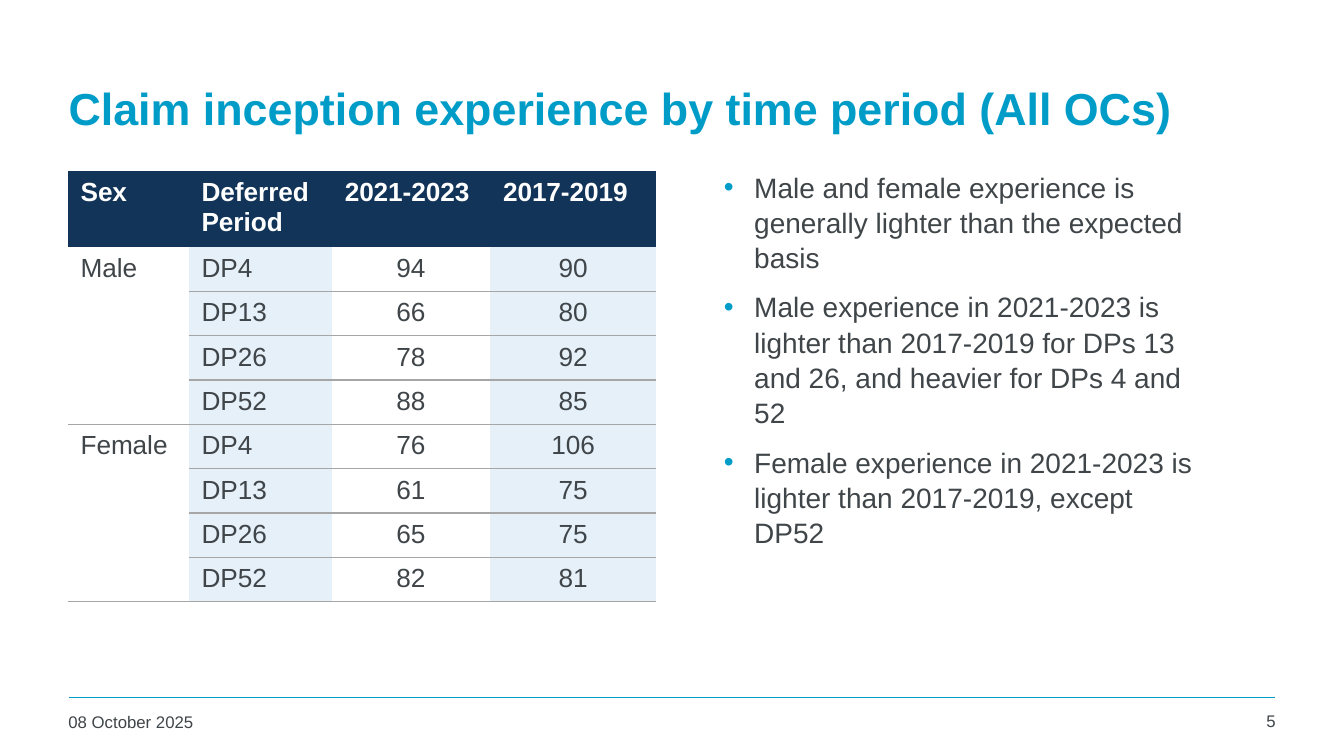
from dataclasses import dataclass

from lxml import etree
from pptx import Presentation
from pptx.dml.color import RGBColor
from pptx.enum import shapes, text
from pptx.oxml import ns
from pptx.util import Inches, Pt


@dataclass(frozen=True)
class Theme:
    font: str = "Arial"
    accent: str = "009CC8"
    navy: str = "113458"
    pale: str = "E5F0F9"
    white: str = "FFFFFF"
    ink: str = "3F4548"
    rule: str = "A6A6A6"
    title_size: float = 32
    body_size: float = 20
    table_size: float = 18.67
    footer_size: float = 12


THEME = Theme()
NO_GRID_STYLE = "{2D5ABB26-0587-4C30-8999-92F81FD0307C}"

TITLE = "Claim inception experience by time period (All OCs)"
HEADINGS = ["Sex", "Deferred Period", "2021-2023", "2017-2019"]
PERIODS = ["DP4", "DP13", "DP26", "DP52"]
EXPERIENCE = {
    "Male": [(94, 90), (66, 80), (78, 92), (88, 85)],
    "Female": [(76, 106), (61, 75), (65, 75), (82, 81)],
}
FINDINGS = [
    "Male and female experience is generally lighter than the expected basis",
    "Male experience in 2021-2023 is lighter than 2017-2019 for DPs 13 and 26, "
    "and heavier for DPs 4 and 52",
    "Female experience in 2021-2023 is lighter than 2017-2019, except DP52",
]


def add_run(paragraph, wording, size, color=THEME.ink, bold=False):
    run = paragraph.add_run()
    run.text = wording
    run.font.name = THEME.font
    run.font.size = Pt(size)
    run.font.bold = bold
    run.font.color.rgb = RGBColor.from_string(color)


def place(shape, box):
    shape.left, shape.top, shape.width, shape.height = (Inches(n) for n in box)


def add_color(parent, tag, color):
    holder = etree.SubElement(parent, ns.qn(tag))
    etree.SubElement(holder, ns.qn("a:srgbClr"), val=color)


def add_bullet(paragraph, indent):
    properties = paragraph._p.get_or_add_pPr()
    properties.set("marL", str(Inches(indent)))
    properties.set("indent", str(-Inches(indent)))
    add_color(properties, "a:buClr", THEME.accent)
    etree.SubElement(properties, ns.qn("a:buChar"), char="•")


def underline_cell(cell):
    properties = cell._tc.get_or_add_tcPr()
    border = etree.Element(ns.qn("a:lnB"), w=str(Pt(1)))
    add_color(border, "a:solidFill", THEME.rule)
    properties.insert(0, border)


def fill_cell(cell, wording, fill, color=THEME.ink, bold=False, centred=False):
    cell.margin_left = cell.margin_right = Inches(0.13)
    cell.margin_top = cell.margin_bottom = Inches(0.07)
    cell.fill.solid()
    cell.fill.fore_color.rgb = RGBColor.from_string(fill)
    paragraph = cell.text_frame.paragraphs[0]
    if centred:
        paragraph.alignment = text.PP_ALIGN.CENTER
    add_run(paragraph, wording, THEME.table_size, color, bold)


# Title
def build_title(slide, box):
    title = slide.shapes.title
    place(title, box)
    frame = title.text_frame
    frame.word_wrap = True
    frame.auto_size = text.MSO_AUTO_SIZE.NONE
    frame.vertical_anchor = text.MSO_ANCHOR.MIDDLE
    paragraph = frame.paragraphs[0]
    paragraph.alignment = text.PP_ALIGN.LEFT
    add_run(paragraph, TITLE, THEME.title_size, THEME.accent, bold=True)


# Experience table: one block of deferred periods for each sex
def build_table(slide, box):
    row_count = 1 + len(EXPERIENCE) * len(PERIODS)
    frame = slide.shapes.add_table(row_count, len(HEADINGS), *(Inches(n) for n in box))
    table = frame.table
    table.first_row = table.horz_banding = False
    table._tbl.tblPr.find(ns.qn("a:tableStyleId")).text = NO_GRID_STYLE
    for column, width in zip(table.columns, [1.2, 1.42, 1.57, 1.65]):
        column.width = Inches(width)
    for index, row in enumerate(table.rows):
        row.height = Inches(0.44 if index else 0.75)

    for column, heading in enumerate(HEADINGS):
        fill_cell(table.cell(0, column), heading, THEME.navy, THEME.white, bold=True)

    for block, (sex, values) in enumerate(EXPERIENCE.items()):
        first = 1 + block * len(PERIODS)
        last = first + len(PERIODS) - 1
        sex_cell = table.cell(first, 0)
        sex_cell.merge(table.cell(last, 0))
        fill_cell(sex_cell, sex, THEME.white)
        underline_cell(sex_cell)
        underline_cell(table.cell(last, 0))
        for row, (period, pair) in enumerate(zip(PERIODS, values), first):
            for column, entry in enumerate((period, *pair), 1):
                cell = table.cell(row, column)
                fill = THEME.pale if column % 2 else THEME.white
                fill_cell(cell, str(entry), fill, centred=column > 1)
                underline_cell(cell)


# Findings list
def build_findings(slide, box):
    body = slide.placeholders[1]
    place(body, box)
    frame = body.text_frame
    frame.word_wrap = True
    frame.auto_size = text.MSO_AUTO_SIZE.NONE
    for index, finding in enumerate(FINDINGS):
        paragraph = frame.add_paragraph() if index else frame.paragraphs[0]
        add_bullet(paragraph, 0.3)
        paragraph.line_spacing = 1.05
        paragraph.space_before = Pt(10 if index else 0)
        add_run(paragraph, finding, THEME.body_size)


# Footer: rule, date and slide number
def build_footer(slide, box):
    left, top, width, height = box
    rule = slide.shapes.add_connector(
        shapes.MSO_CONNECTOR.STRAIGHT,
        Inches(left), Inches(top), Inches(left + width), Inches(top),
    )
    rule.line.color.rgb = RGBColor.from_string(THEME.accent)
    rule.line.width = Pt(1)
    etree.SubElement(rule._element.spPr, ns.qn("a:effectLst"))

    right = left + width + 0.1
    notes = [
        ("08 October 2025", left - 0.1, 0.09, 2.94, text.PP_ALIGN.LEFT),
        ("5", right - 0.94, 0.08, 0.94, text.PP_ALIGN.RIGHT),
    ]
    for wording, note_left, drop, note_width, alignment in notes:
        note = slide.shapes.add_textbox(
            Inches(note_left), Inches(top + drop), Inches(note_width), Inches(height - drop)
        )
        note.text_frame.word_wrap = True
        paragraph = note.text_frame.paragraphs[0]
        paragraph.alignment = alignment
        add_run(paragraph, wording, THEME.footer_size)


def main():
    presentation = Presentation()
    presentation.slide_width = Inches(13.33)
    presentation.slide_height = Inches(7.5)
    slide = presentation.slides.add_slide(presentation.slide_layouts[1])
    build_title(slide, (0.58, 0.44, 12.09, 1.25))
    build_table(slide, (0.67, 1.7, 5.84, 4.27))
    build_findings(slide, (7.08, 1.62, 4.86, 5.07))
    build_footer(slide, (0.68, 6.92, 11.97, 0.45))
    presentation.save("out.pptx")


if __name__ == "__main__":
    main()
